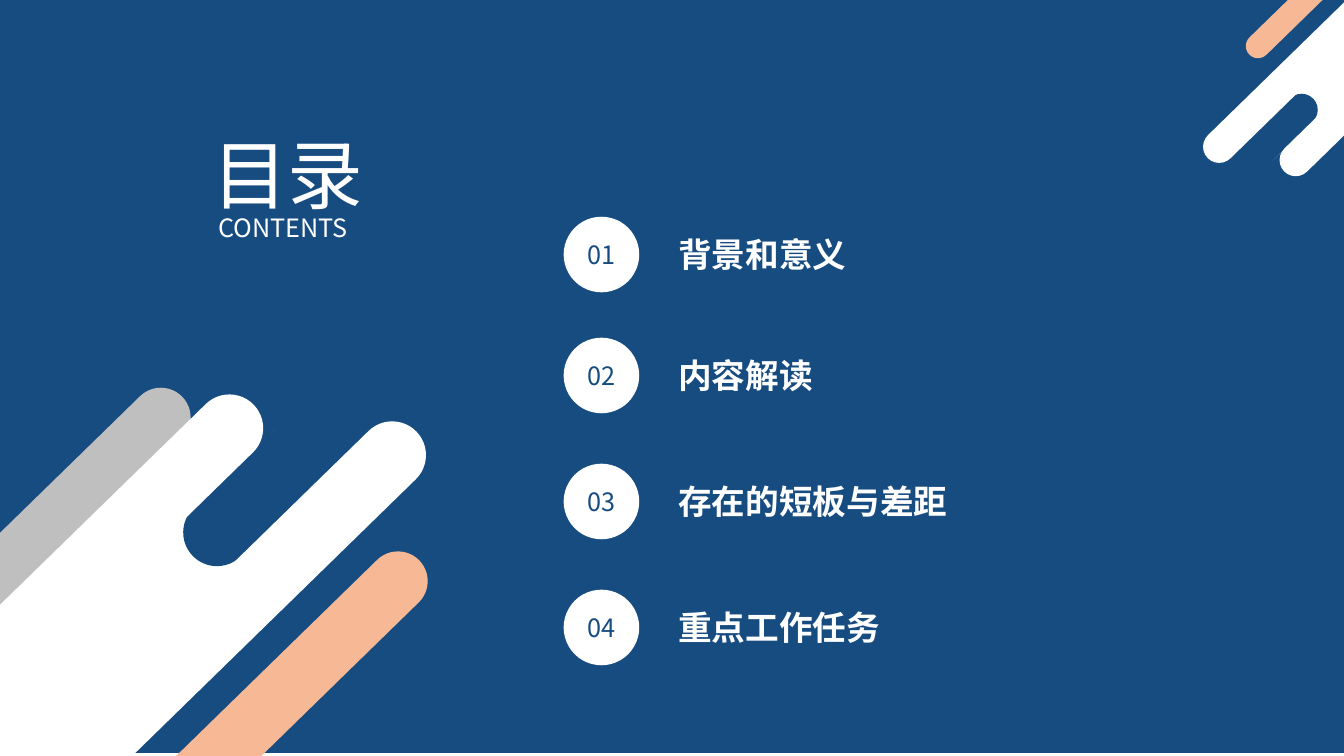
from lxml.etree import SubElement
from pptx import Presentation
from pptx.dml.color import RGBColor
from pptx.enum.shapes import MSO_SHAPE
from pptx.enum.text import MSO_ANCHOR, MSO_AUTO_SIZE, PP_ALIGN
from pptx.oxml.ns import qn
from pptx.util import Inches, Pt

BLUE = RGBColor(0x17, 0x4C, 0x81)
WHITE = RGBColor(0xFF, 0xFF, 0xFF)
GRAY = RGBColor(0xBF, 0xBF, 0xBF)
PEACH = RGBColor(0xF7, 0xB9, 0x95)
FONT = "Noto Sans CJK SC"

TITLE = "目录"
SUBTITLE = "CONTENTS"
AGENDA = [
    (2.15, "背景和意义"),
    (3.35, "内容解读"),
    (4.6, "存在的短板与差距"),
    (5.85, "重点工作任务"),
]
CIRCLE_LEFT, CIRCLE_SIZE = 5.59, 0.75
LABEL_LEFT, LABEL_WIDTH, LABEL_HEIGHT = 6.63, 3.84, 0.5

BAR_ANGLE = 315.7
BARS = [
    (-2.36, 6.2, 6.47, 0.67, WHITE),
    (1.31, 3.7, 4.24, 0.67, BLUE),
    (-1.41, 4.95, 3.75, 0.59, GRAY),
    (-2.4, 5.68, 5.73, 0.67, WHITE),
    (-0.94, 6.01, 5.91, 0.67, WHITE),
    (0.95, 6.57, 3.74, 0.59, PEACH),
    (11.98, 0.34, 3.07, 0.32, WHITE),
    (11.3, 1.52, 2.01, 0.32, BLUE),
    (12.35, 0.59, 2.72, 0.32, WHITE),
    (11.58, 0.43, 2.8, 0.32, WHITE),
    (12.17, -0.12, 1.55, 0.24, PEACH),
]


def add_shape(s, kind, left, top, width, height, color):
    sp = s.shapes.add_shape(kind, Inches(left), Inches(top), Inches(width), Inches(height))
    sp.shadow.inherit = False
    sp.fill.solid()
    sp.fill.fore_color.rgb = color
    sp.line.fill.background()
    return sp


def write(sp, text, size=18, color=WHITE, bold=False, align=PP_ALIGN.LEFT,
          anchor=MSO_ANCHOR.TOP, spacing=1.0):
    tf = sp.text_frame
    tf.word_wrap = True
    tf.auto_size = MSO_AUTO_SIZE.NONE
    tf.vertical_anchor = anchor
    p = tf.paragraphs[0]
    p.alignment = align
    p.line_spacing = spacing
    r = p.add_run()
    r.text = text
    r.font.size = Pt(size)
    r.font.bold = bold
    r.font.color.rgb = color
    r.font.name = FONT
    SubElement(r.font._element, qn("a:ea")).set("typeface", FONT)


def add_text(s, text, left, top, width, height, **fmt):
    box = s.shapes.add_textbox(Inches(left), Inches(top), Inches(width), Inches(height))
    write(box, text, **fmt)


def main():
    prs = Presentation()
    prs.slide_width, prs.slide_height = Inches(13.33), Inches(7.5)
    s = prs.slides.add_slide(prs.slide_layouts[5])

    add_shape(s, MSO_SHAPE.RECTANGLE, 0, -0.03, 13.33, 7.5, BLUE)
    for *box, color in BARS:
        bar = add_shape(s, MSO_SHAPE.ROUNDED_RECTANGLE, *box, color)
        bar.adjustments[0] = 0.5
        bar.rotation = BAR_ANGLE

    title = s.shapes.title
    title.left, title.top = Inches(1.77), Inches(1.04)
    title.width, title.height = Inches(2.17), Inches(1.1)
    write(title, TITLE, size=54, align=PP_ALIGN.CENTER, spacing=1.2)
    s.shapes.element.append(title.element)
    add_text(s, SUBTITLE, 2.07, 2.06, 1.61, 0.4)

    for number, (top, label) in enumerate(AGENDA, 1):
        circle = add_shape(s, MSO_SHAPE.OVAL, CIRCLE_LEFT, top, CIRCLE_SIZE, CIRCLE_SIZE, WHITE)
        tf = circle.text_frame
        tf.margin_left = tf.margin_right = tf.margin_top = tf.margin_bottom = 0
        write(circle, f"{number:02d}", color=BLUE, align=PP_ALIGN.CENTER,
              anchor=MSO_ANCHOR.MIDDLE)
        label_top = top + (CIRCLE_SIZE - LABEL_HEIGHT) / 2
        add_text(s, label, LABEL_LEFT, label_top, LABEL_WIDTH, LABEL_HEIGHT, size=24, bold=True)

    prs.save("out.pptx")


if __name__ == "__main__":
    main()
